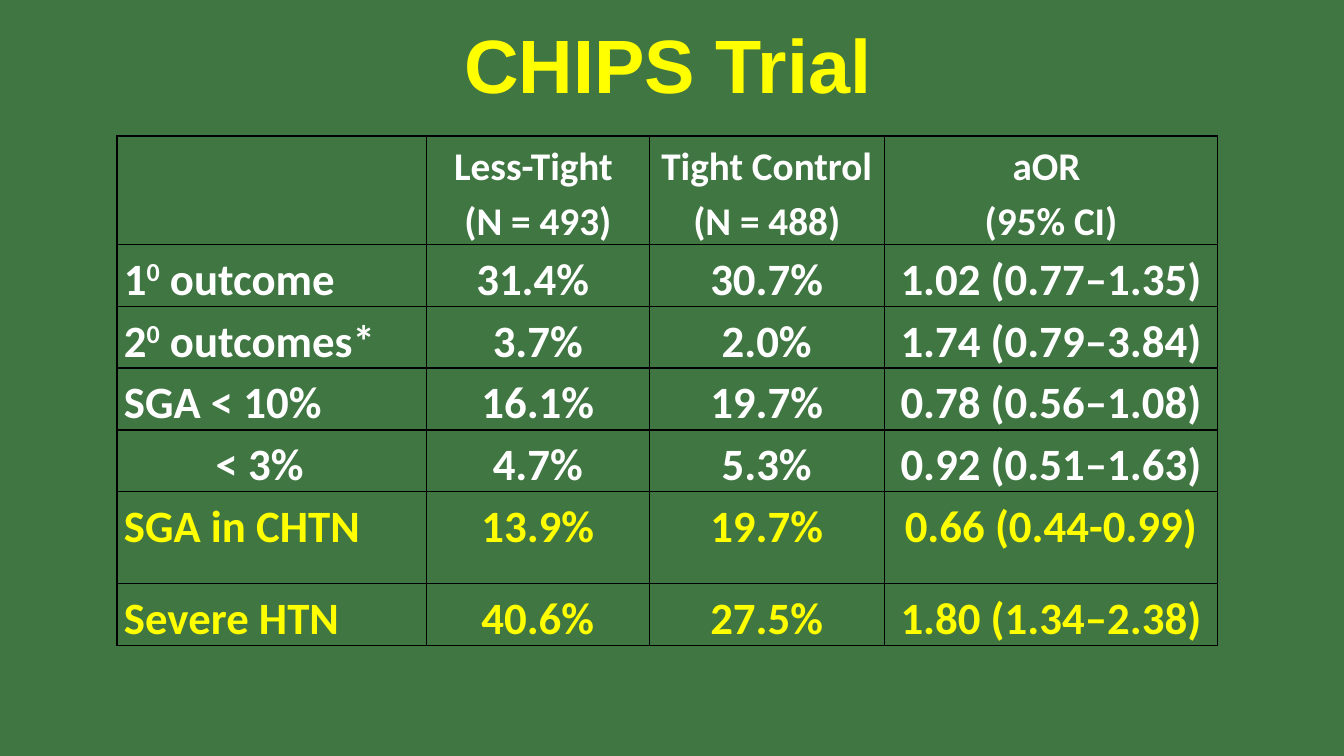
from lxml import etree
from pptx import Presentation
from pptx.dml.color import RGBColor
from pptx.enum import text
from pptx.oxml import ns
from pptx.util import Inches, Pt

GREEN = RGBColor(0x40, 0x76, 0x42)
WHITE = RGBColor(0xFF, 0xFF, 0xFF)
YELLOW = RGBColor(0xFF, 0xFF, 0x00)
BLACK = RGBColor(0x00, 0x00, 0x00)

COLUMN_WIDTHS = [3.07, 2.21, 2.33, 3.31]
TABLE_LEFT = 1.16
ROW_HEIGHT = 0.61
CELL_MARGIN = 0.07
SUBROW_INDENT = 0.91

# Each row: height, font size, colour, cells; text between bars is superscript
TRIAL_ROWS = [
    (1.07, 28, WHITE, ["", "Less-Tight \n(N = 493)", "Tight Control\n(N = 488)", "aOR \n(95% CI)"]),
    (ROW_HEIGHT, 32, WHITE, ["1|0| outcome", "31.4% ", "30.7%", "1.02 (0.77–1.35)"]),
    (ROW_HEIGHT, 32, WHITE, ["2|0| outcomes*", "3.7%", "2.0%", "1.74 (0.79–3.84)"]),
    (ROW_HEIGHT, 32, WHITE, ["SGA < 10%", "16.1%", "19.7%", "0.78 (0.56–1.08)"]),
    (ROW_HEIGHT, 32, WHITE, ["< 3%", "4.7%", "5.3%", "0.92 (0.51–1.63)"]),
    (0.91, 32, YELLOW, ["SGA in CHTN", "13.9%", "19.7%", "0.66 (0.44-0.99)"]),
]
SEVERE_ROWS = [
    (ROW_HEIGHT, 32, YELLOW, ["Severe HTN", "40.6%", "27.5%", "1.80 (1.34–2.38)"]),
]


def format_cell(cell, indent):
    """Set margins, black borders and an empty fill."""
    margins = {"margin_left": CELL_MARGIN + indent, "margin_right": CELL_MARGIN,
               "margin_top": 0, "margin_bottom": 0}
    for name, value in margins.items():
        setattr(cell, name, Inches(value))
    properties = cell._tc.get_or_add_tcPr()
    for side in ("a:lnL", "a:lnR", "a:lnT", "a:lnB"):
        border = etree.SubElement(properties, ns.qn(side), w=str(Pt(1)))
        fill = etree.SubElement(border, ns.qn("a:solidFill"))
        etree.SubElement(fill, ns.qn("a:srgbClr"), val=str(BLACK))
    cell.fill.background()


def set_font(font, name, size, color):
    values = {"name": name, "size": Pt(size), "bold": True}
    for attribute, value in values.items():
        setattr(font, attribute, value)
    font.color.rgb = color


# Slide
presentation = Presentation()
presentation.slide_width = Inches(13.33)
presentation.slide_height = Inches(7.5)
slide = presentation.slides.add_slide(presentation.slide_layouts[6])
slide.background.fill.solid()
slide.background.fill.fore_color.rgb = GREEN

# Title
title = slide.shapes.add_textbox(Inches(2), Inches(0), Inches(9.25), Inches(1.25))
title.text_frame.word_wrap = True
title.text_frame.vertical_anchor = text.MSO_ANCHOR.MIDDLE
paragraph = title.text_frame.paragraphs[0]
paragraph.alignment = text.PP_ALIGN.CENTER
run = paragraph.add_run()
run.text = "CHIPS Trial"
set_font(run.font, "Arial", 54, YELLOW)

# Outcome tables
for top, rows in ((1.35, TRIAL_ROWS), (5.79, SEVERE_ROWS)):
    table = slide.shapes.add_table(
        len(rows), len(COLUMN_WIDTHS), Inches(TABLE_LEFT), Inches(top),
        Inches(sum(COLUMN_WIDTHS)), Inches(sum(row[0] for row in rows))).table
    table.first_row = False
    table.horz_banding = False
    for column, width in zip(table.columns, COLUMN_WIDTHS):
        column.width = Inches(width)

    for row_index, (height, size, color, labels) in enumerate(rows):
        table.rows[row_index].height = Inches(height)
        for column_index, label in enumerate(labels):
            cell = table.cell(row_index, column_index)
            format_cell(cell, SUBROW_INDENT if label == "< 3%" else 0)
            for line_index, line in enumerate(label.split("\n")):
                frame = cell.text_frame
                paragraph = frame.add_paragraph() if line_index else frame.paragraphs[0]
                paragraph.line_spacing = 1.15
                paragraph.alignment = text.PP_ALIGN.CENTER if column_index else text.PP_ALIGN.LEFT
                for part_index, part in enumerate(line.split("|")):
                    run = paragraph.add_run()
                    run.text = part
                    set_font(run.font, "Calibri", size, color)
                    if part_index % 2:
                        run._r.get_or_add_rPr().set("baseline", "30000")

presentation.save("out.pptx")
